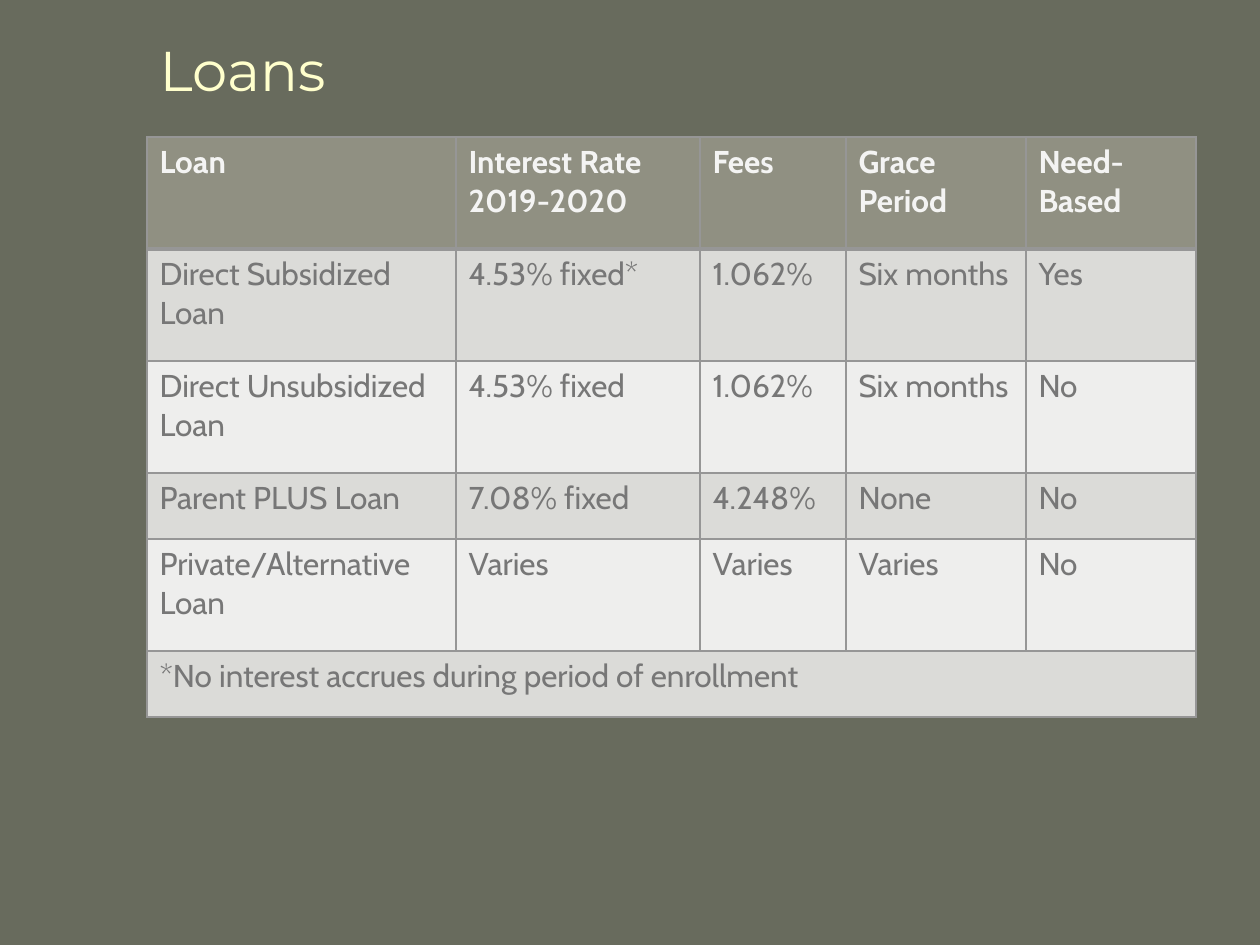
from lxml.etree import SubElement
from pptx import Presentation
from pptx.dml.color import RGBColor
from pptx.enum.text import MSO_ANCHOR, PP_ALIGN
from pptx.oxml.ns import qn
from pptx.util import Pt

SCALE = 914400 / 126
BACK = RGBColor(0x68, 0x6B, 0x5D)
CREAM = RGBColor(0xFF, 0xFF, 0xCC)
HEAD = RGBColor(0x90, 0x90, 0x82)
WHITE = RGBColor(0xF4, 0xF4, 0xF3)
DARK = RGBColor(0xDB, 0xDB, 0xD8)
LIGHT = RGBColor(0xEE, 0xEE, 0xED)
GREY = RGBColor(0x77, 0x77, 0x77)
EDGE = RGBColor(0x96, 0x96, 0x96)

COLS = [309, 244, 146, 180, 170]
ROWS = [112, 112, 112, 66, 112, 66]
LOANS = [
    ["Loan", "Interest Rate 2019-2020", "Fees", "Grace Period", "Need-Based"],
    ["Direct Subsidized Loan", "4.53% fixed*", "1.062%", "Six months", "Yes"],
    ["Direct Unsubsidized Loan", "4.53% fixed", "1.062%", "Six months", "No"],
    ["Parent PLUS Loan", "7.08% fixed", "4.248%", "None", "No"],
    ["Private/Alternative Loan", "Varies", "Varies", "Varies", "No"],
    ["*No interest accrues during period of enrollment", "", "", "", ""],
]


def px(n):
    return round(n * SCALE)


def write(frame, text, font="Cabin", size=18, color=GREY, bold=False):
    para = frame.paragraphs[0]
    para.alignment = PP_ALIGN.LEFT
    run = para.add_run()
    run.text = text
    run.font.name = font
    run.font.size = Pt(size)
    run.font.bold = bold
    run.font.color.rgb = color


def add_title(slide, text):
    title = slide.shapes.title
    title.left, title.top, title.width, title.height = map(px, (147, 22, 987, 94))
    title.text_frame.word_wrap = True
    title.text_frame.vertical_anchor = MSO_ANCHOR.MIDDLE
    write(title.text_frame, text, font="Montserrat", size=32, color=CREAM)


def add_edges(cell, top, base):
    props = cell._tc.get_or_add_tcPr()
    sides = [("L", 1), ("R", 1), ("T", top), ("B", base)]
    for spot, (side, width) in enumerate(sides):
        line = SubElement(props, qn(f"a:ln{side}"), w=str(Pt(width)))
        fill = SubElement(line, qn("a:solidFill"))
        SubElement(fill, qn("a:srgbClr"), val=str(EDGE))
        props.insert(spot, line)


def add_grid(slide):
    frame = slide.shapes.add_table(
        len(ROWS), len(COLS), px(147), px(137), px(sum(COLS)), px(sum(ROWS))
    )
    table = frame.table
    for col, width in zip(table.columns, COLS):
        col.width = px(width)
    for r, (row, height) in enumerate(zip(table.rows, ROWS)):
        row.height = px(height)
        head = r == 0
        shade = HEAD if head else DARK if r % 2 else LIGHT
        for cell, text in zip(row.cells, LOANS[r]):
            cell.fill.solid()
            cell.fill.fore_color.rgb = shade
            add_edges(cell, top=3 if r == 1 else 1, base=3 if head else 1)
            if text:
                write(cell.text_frame, text, color=WHITE if head else GREY, bold=head)
    last = len(ROWS) - 1
    table.cell(last, 0).merge(table.cell(last, len(COLS) - 1))


def main():
    deck = Presentation()
    deck.slide_width, deck.slide_height = px(1260), px(945)
    slide = deck.slides.add_slide(deck.slide_layouts[5])
    slide.background.fill.solid()
    slide.background.fill.fore_color.rgb = BACK
    add_title(slide, "Loans")
    add_grid(slide)
    deck.save("out.pptx")


if __name__ == "__main__":
    main()
